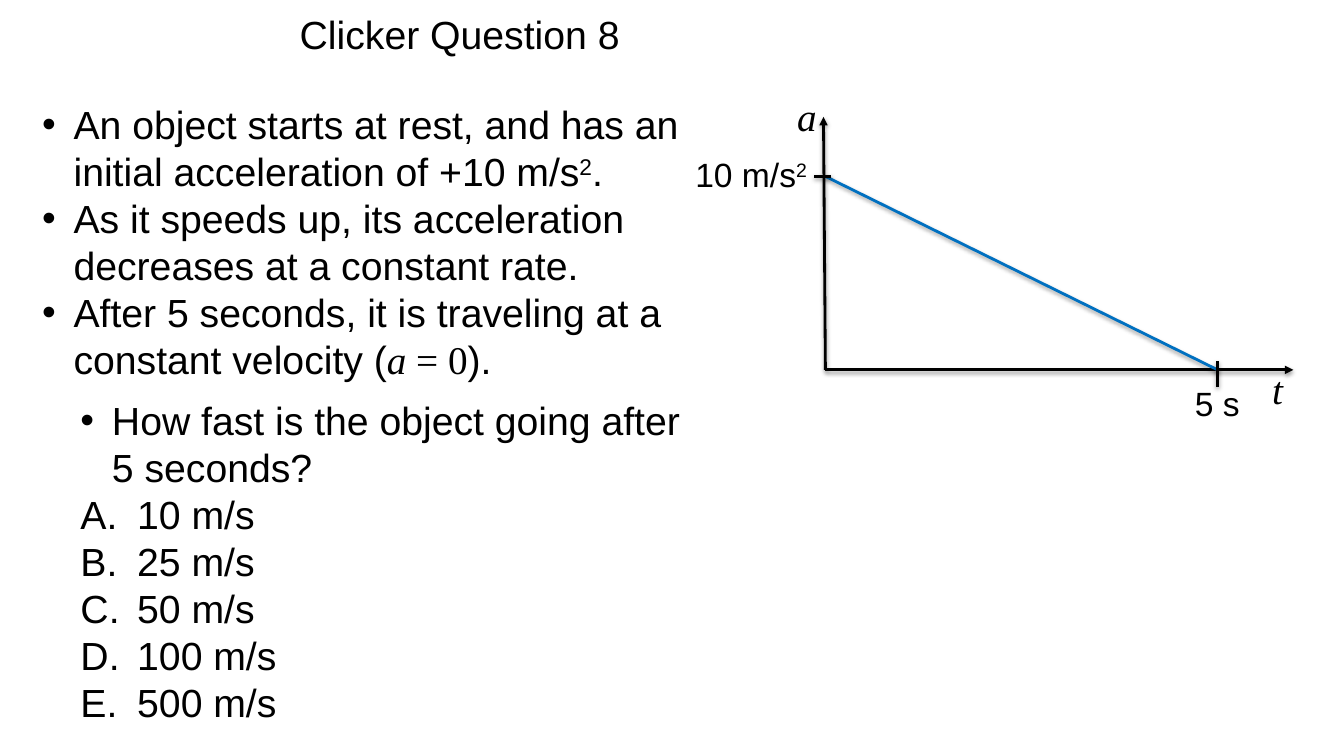
from lxml.etree import SubElement
from pptx import Presentation
from pptx.dml.color import RGBColor
from pptx.enum.shapes import MSO_CONNECTOR as Connector
from pptx.enum.text import MSO_ANCHOR as Anchor, MSO_AUTO_SIZE as AutoSize, PP_ALIGN as Align
from pptx.oxml.ns import qn
from pptx.util import Pt

BLACK = RGBColor(0x00, 0x00, 0x00)
BLUE = RGBColor(0x00, 0x70, 0xC0)
BODY = {"name": "Arial", "size": Pt(28), "italic": False}
LABEL = {**BODY, "size": Pt(24)}
MATH = {**BODY, "name": "Times New Roman"}
VARIABLE = {**MATH, "italic": True}
BULLET = ("a:buChar", {"char": "•"})
LETTER = ("a:buAutoNum", {"type": "alphaUcPeriod"})


def add_runs(paragraph, runs):
    paragraph.line_spacing = Pt(runs[0][1]["size"].pt * 1.2)
    for wording, style, *raised in runs:
        run = paragraph.add_run()
        run.text = wording
        run.font.color.rgb = BLACK
        for attribute, value in style.items():
            setattr(run.font, attribute, value)
        if raised:
            run._r.get_or_add_rPr().set("baseline", "30000")


def add_text(slide, box, paragraphs, wrap=True, fit=AutoSize.SHAPE_TO_FIT_TEXT):
    frame = slide.shapes.add_textbox(*map(Pt, box)).text_frame
    frame.word_wrap = wrap
    frame.auto_size = fit
    for number, runs in enumerate(paragraphs):
        paragraph = frame.add_paragraph() if number else frame.paragraphs[0]
        add_runs(paragraph, runs)
    return frame


def add_marker(paragraph, marker, indent):
    properties = paragraph._p.get_or_add_pPr()
    properties.set("marL", str(Pt(indent)))
    properties.set("indent", str(-Pt(indent)))
    SubElement(properties, qn("a:buFont"), typeface="Arial" if marker is BULLET else "+mj-lt")
    tag, attributes = marker
    SubElement(properties, qn(tag), attributes)


def add_line(slide, start, end, color=BLACK, arrow=False):
    line = slide.shapes.add_connector(Connector.STRAIGHT, *map(Pt, (*start, *end)))
    line.line.color.rgb = color
    line.line.width = Pt(2)
    if arrow:
        SubElement(line.line._get_or_add_ln(), qn("a:tailEnd"), type="triangle")
    effects = SubElement(line._element.spPr, qn("a:effectLst"))
    shadow = SubElement(effects, qn("a:outerShdw"), blurRad=str(Pt(3.1)),
                        dist=str(Pt(1.6)), dir="5400000", rotWithShape="0")
    shade = SubElement(shadow, qn("a:srgbClr"), val=str(BLACK))
    SubElement(shade, qn("a:alpha"), val="38000")


def add_title(slide, box):
    frame = add_text(slide, box, [[("Clicker Question 8", BODY)]], fit=AutoSize.NONE)
    frame.vertical_anchor = Anchor.MIDDLE
    frame.paragraphs[0].alignment = Align.CENTER


def add_graph(slide, box):
    left, top, width, height = box
    right, bottom = left + width, top + height
    origin_x, origin_y = left + 100, bottom - 41.8
    start_y, end_x = top + 63.4, right - 54
    origin = origin_x, origin_y

    add_line(slide, origin, (origin_x - 1.4, top + 20.9), arrow=True)
    add_line(slide, origin, (right, origin_y), arrow=True)
    add_line(slide, (origin_x, start_y), (end_x, origin_y), BLUE)
    add_line(slide, (origin_x - 7.9, start_y), (origin_x + 4.3, start_y))
    add_line(slide, (end_x, origin_y - 6.5), (end_x, origin_y + 12.2))

    labels = [
        ((left + 72.7, top, 28.8, 41), [("a", VARIABLE)]),
        ((right - 22.3, origin_y - 6.5, 22.3, 41), [("t", VARIABLE)]),
        ((left, start_y - 19.4, 96.5, 36), [("10 m/s", LABEL), ("2", LABEL, True)]),
        ((end_x - 23.4, bottom - 36, 46.8, 36), [("5 s", LABEL)]),
    ]
    for label_box, runs in labels:
        add_text(slide, label_box, [runs], wrap=False)


def add_situation(slide, box):
    facts = [
        [("An object starts at rest, and has an initial acceleration of +10 m/s", BODY),
         ("2", BODY, True), (".", BODY)],
        [("As it speeds up, its acceleration decreases at a constant rate.", BODY)],
        [("After 5 seconds, it is traveling at a constant velocity (", BODY),
         ("a", VARIABLE), (" = 0", MATH), (").", BODY)],
    ]
    for paragraph in add_text(slide, box, facts).paragraphs:
        add_marker(paragraph, BULLET, 22.5)


def add_question(slide, box):
    answers = [f"{speed} m/s" for speed in (10, 25, 50, 100, 500)]
    wordings = ["How fast is the object going after 5 seconds?", *answers]
    frame = add_text(slide, box, [[(wording, BODY)] for wording in wordings])
    question, *choices = frame.paragraphs
    add_marker(question, BULLET, 22.5)
    for choice in choices:
        add_marker(choice, LETTER, 40.5)


def main():
    deck = Presentation()
    deck.slide_width, deck.slide_height = Pt(960), Pt(540)
    slide = deck.slides.add_slide(deck.slide_layouts[6])
    add_graph(slide, (489.6, 62.6, 434.2, 243.4))
    add_situation(slide, (23, 68.4, 470.2, 211))
    add_title(slide, (130.3, 3.6, 396, 41.8))
    add_question(slide, (50.4, 279.4, 442.8, 244.8))
    deck.save("out.pptx")


if __name__ == "__main__":
    main()
